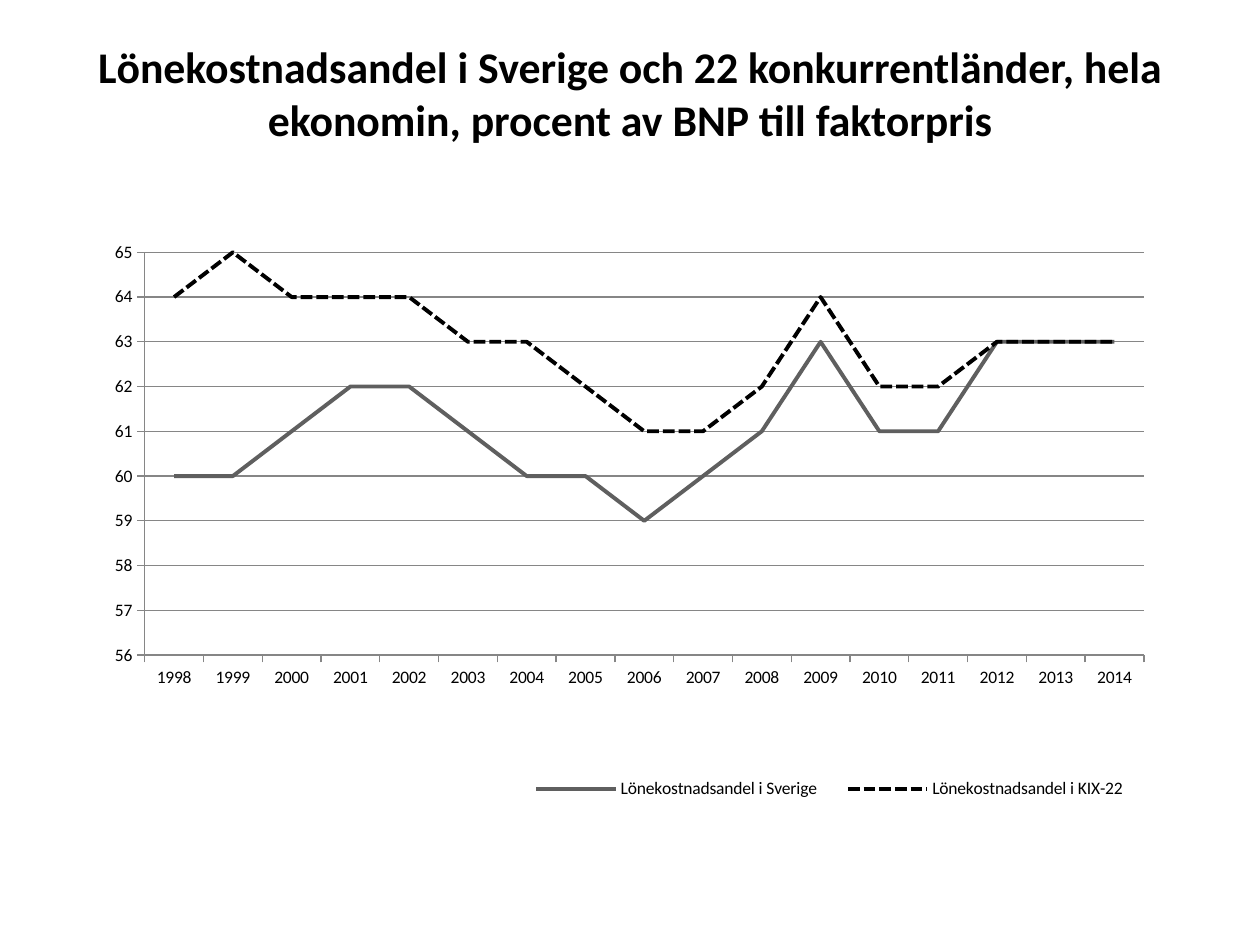
from dataclasses import dataclass

from lxml import etree
from pptx import Presentation
from pptx.chart.data import CategoryChartData
from pptx.dml.color import RGBColor
from pptx.enum.chart import XL_CHART_TYPE, XL_LEGEND_POSITION, XL_MARKER_STYLE, XL_TICK_MARK
from pptx.enum.dml import MSO_LINE
from pptx.enum.text import MSO_ANCHOR, PP_ALIGN
from pptx.oxml.ns import qn
from pptx.util import Pt

LINE = XL_CHART_TYPE.LINE
LEGEND_BOTTOM = XL_LEGEND_POSITION.BOTTOM
NO_MARKER = XL_MARKER_STYLE.NONE
TICK_OUT = XL_TICK_MARK.OUTSIDE
SOLID = MSO_LINE.SOLID
DASHED = MSO_LINE.SQUARE_DOT
MIDDLE = MSO_ANCHOR.MIDDLE
CENTER = PP_ALIGN.CENTER


@dataclass(frozen=True)
class Theme:
    font: str = "Calibri"
    text: RGBColor = RGBColor(0, 0, 0)
    grid: RGBColor = RGBColor(0x86, 0x86, 0x86)
    sweden: RGBColor = RGBColor(0x5F, 0x5F, 0x5F)
    kix: RGBColor = RGBColor(0, 0, 0)
    title_size: int = 25
    chart_size: int = 10


THEME = Theme()
CHART_WIDTH, CHART_HEIGHT = Pt(648), Pt(356.4)
TITLE = "Lönekostnadsandel i Sverige och 22 konkurrentländer, hela ekonomin, procent av BNP till faktorpris"
YEARS = [str(year) for year in range(1998, 2015)]
SERIES = [
    ("Lönekostnadsandel i Sverige", THEME.sweden, SOLID,
     [60, 60, 61, 62, 62, 61, 60, 60, 59, 60, 61, 63, 61, 61, 63, 63, 63]),
    ("Lönekostnadsandel i KIX-22", THEME.kix, DASHED,
     [64, 65, 64, 64, 64, 63, 63, 62, 61, 61, 62, 64, 62, 62, 63, 63, 63]),
]


def set_font(font, size, bold=False):
    font.name = THEME.font
    font.size = Pt(size)
    font.bold = bold
    font.color.rgb = THEME.text


def style_line(line, color, width):
    line.color.rgb = color
    line.width = Pt(width)


def add_title(s):
    sp = s.shapes.add_textbox(Pt(12), Pt(21.6), Pt(696), Pt(92))
    tf = sp.text_frame
    tf.word_wrap = True
    tf.vertical_anchor = MIDDLE
    tf.margin_bottom = Pt(33)
    p = tf.paragraphs[0]
    p.text = TITLE
    p.alignment = CENTER
    set_font(p.font, THEME.title_size, bold=True)


def set_layout(element, x, y, w, h, inner=False):
    layout = element.find(qn("c:layout"))
    if layout is None:
        layout = etree.Element(qn("c:layout"))
        if inner:
            element.insert(0, layout)
        else:
            element.find(qn("c:legendPos")).addnext(layout)
    for child in list(layout):
        layout.remove(child)
    manual = etree.SubElement(layout, qn("c:manualLayout"))
    values = [("xMode", "edge"), ("yMode", "edge"),
              ("x", x / CHART_WIDTH), ("y", y / CHART_HEIGHT),
              ("w", w / CHART_WIDTH), ("h", h / CHART_HEIGHT)]
    if inner:
        values.insert(0, ("layoutTarget", "inner"))
    for tag, value in values:
        etree.SubElement(manual, qn(f"c:{tag}")).set("val", str(value))


def style_axes(chart):
    for axis in (chart.category_axis, chart.value_axis):
        axis.major_tick_mark = TICK_OUT
        style_line(axis.format.line, THEME.grid, 0.75)
    axis = chart.value_axis
    axis.minimum_scale, axis.maximum_scale, axis.major_unit = 56, 65, 1
    axis.has_major_gridlines = True
    style_line(axis.major_gridlines.format.line, THEME.grid, 0.75)
    axis.tick_labels.number_format = "General"
    axis.tick_labels.number_format_is_linked = False


def add_line_chart(s):
    data = CategoryChartData()
    data.categories = YEARS
    for name, _, _, values in SERIES:
        data.add_series(name, values)
    chart = s.shapes.add_chart(LINE, Pt(36), Pt(126), CHART_WIDTH, CHART_HEIGHT, data).chart
    set_font(chart.font, THEME.chart_size)
    chart.has_title = False
    style_axes(chart)
    plot = chart.plots[0]
    plot.vary_by_categories = False
    for series, (_, color, dash, _) in zip(plot.series, SERIES):
        series.smooth = False
        series.marker.style = NO_MARKER
        style_line(series.format.line, color, 2.25)
        series.format.line.dash_style = dash
    chart.has_legend = True
    chart.legend.position = LEGEND_BOTTOM
    chart.legend.include_in_layout = False
    plot_area = chart.element.find(".//" + qn("c:plotArea"))
    set_layout(plot_area, Pt(46.7), Pt(18.2), Pt(571), Pt(230.2), inner=True)
    set_layout(chart.element.find(".//" + qn("c:legend")), Pt(256), Pt(314), Pt(364), Pt(21.4))


def main():
    prs = Presentation()
    prs.slide_width, prs.slide_height = Pt(720), Pt(540)
    s = prs.slides.add_slide(prs.slide_layouts[6])
    add_title(s)
    add_line_chart(s)
    prs.save("out.pptx")


if __name__ == "__main__":
    main()
